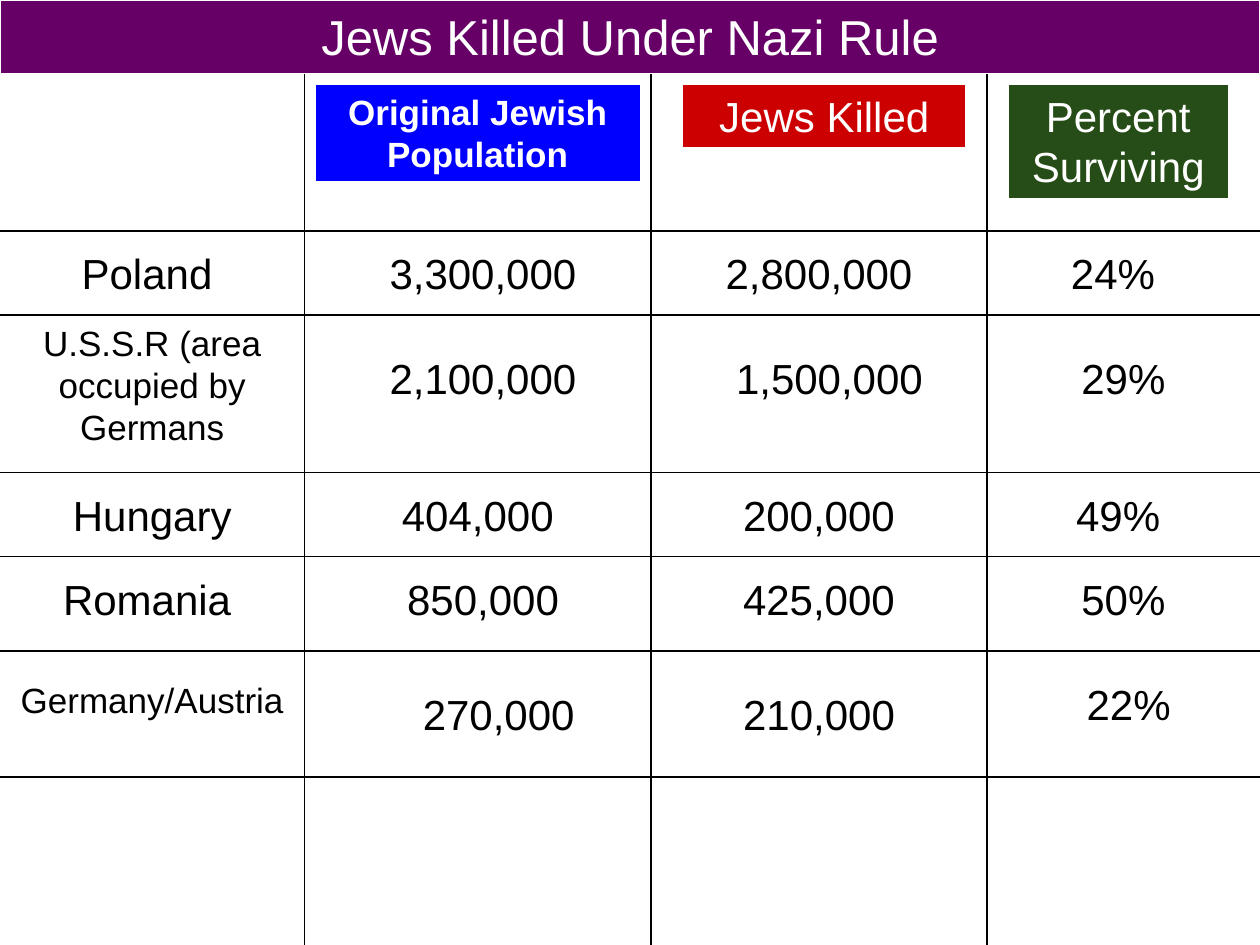
"""Build a slide tabulating Jews killed under Nazi rule by country."""
import pptx
import pptx.dml.color
import pptx.enum.shapes
import pptx.enum.text
import pptx.oxml
import pptx.oxml.ns
import pptx.util

Pt = pptx.util.Pt
WIDTH, HEIGHT = 720, 540
TITLE_HEIGHT = 42

BANNERS = [
    ("Jews Killed Under Nazi Rule", 0, 0, WIDTH, TITLE_HEIGHT, 28, False, "660066"),
    ("Original Jewish Population", 180, 48, 186, 56, 20, True, "0000FF"),
    ("Jews Killed", 390, 48, 162, 36.5, 24, False, "CC0000"),
    ("Percent Surviving", 576, 48, 126, 65.5, 24, False, "264D17"),
]
ROW_RULES = [132, 180, 270, 318, 372, 444]
COLUMN_RULES = [174, 372, 564]

COUNTRIES = [
    [("Poland", 0, 138, 168, 24), ("3,300,000", 186, 138, 180, 24),
     ("2,800,000", 384, 138, 168, 24), ("24%", 588, 138, 96, 24)],
    [("U.S.S.R (area occupied by Germans", 0, 180, 174, 20), ("2,100,000", 192, 198, 168, 24),
     ("1,500,000", 402, 198, 144, 24), ("29%", 606, 198, 72, 24)],
    [("Hungary", 0, 276, 174, 24), ("404,000", 192, 276, 162, 24),
     ("200,000", 396, 276, 144, 24), ("49%", 606, 276, 66, 24)],
    [("Romania", 0, 324, 168, 24), ("850,000", 198, 324, 156, 24),
     ("425,000", 396, 324, 144, 24), ("50%", 606, 324, 72, 24)],
    [("Germany/Austria", 0, 384, 174, 20), ("270,000", 216, 390, 138, 24),
     ("210,000", 408, 390, 120, 24), ("22%", 612, 384, 66, 24)],
]
LABEL_HEIGHTS = {"U.S.S.R (area occupied by Germans": 79, "Germany/Austria": 31}
FIGURE_HEIGHT = 36


def paint(color_format, value):
    color_format.rgb = pptx.dml.color.RGBColor.from_string(value)


def write(box, words, size, color, bold=False):
    frame = box.text_frame
    frame.word_wrap = True
    frame.auto_size = pptx.enum.text.MSO_AUTO_SIZE.SHAPE_TO_FIT_TEXT
    frame.vertical_anchor = pptx.enum.text.MSO_ANCHOR.TOP
    paragraph = frame.paragraphs[0]
    paragraph.text = words
    paragraph.alignment = pptx.enum.text.PP_ALIGN.CENTER
    paragraph.font.name = "Arial"
    paragraph.font.size = Pt(size)
    paragraph.font.bold = bold
    paint(paragraph.font.color, color)


def add_banner(slide, words, left, top, width, height, size, bold, fill):
    banner = slide.shapes.add_shape(
        pptx.enum.shapes.MSO_SHAPE.RECTANGLE, Pt(left), Pt(top), Pt(width), Pt(height))
    banner.shadow.inherit = False
    banner.fill.solid()
    paint(banner.fill.fore_color, fill)
    paint(banner.line.color, "FFFFFF")
    banner.line.width = Pt(0.75)
    write(banner, words, size, "FFFFFF", bold)


def add_rule(slide, x1, y1, x2, y2):
    rule = slide.shapes.add_connector(
        pptx.enum.shapes.MSO_CONNECTOR.STRAIGHT, Pt(x1), Pt(y1), Pt(x2), Pt(y2))
    paint(rule.line.color, "000000")
    rule.line.width = Pt(0.75)
    properties = rule._element.spPr
    properties.append(pptx.oxml.parse_xml(
        f"<a:effectLst {pptx.oxml.ns.nsdecls('a')}/>"))


def main():
    deck = pptx.Presentation()
    deck.slide_width, deck.slide_height = Pt(WIDTH), Pt(HEIGHT)
    slide = deck.slides.add_slide(deck.slide_layouts[6])

    for y in ROW_RULES:
        add_rule(slide, 0, y, WIDTH, y)
    for x in COLUMN_RULES:
        add_rule(slide, x, TITLE_HEIGHT, x, HEIGHT)
    for banner in BANNERS:
        add_banner(slide, *banner)
    for country in COUNTRIES:
        for words, left, top, width, size in country:
            height = LABEL_HEIGHTS.get(words, FIGURE_HEIGHT)
            entry = slide.shapes.add_textbox(Pt(left), Pt(top), Pt(width), Pt(height))
            write(entry, words, size, "000000")

    deck.save("out.pptx")


if __name__ == "__main__":
    main()
